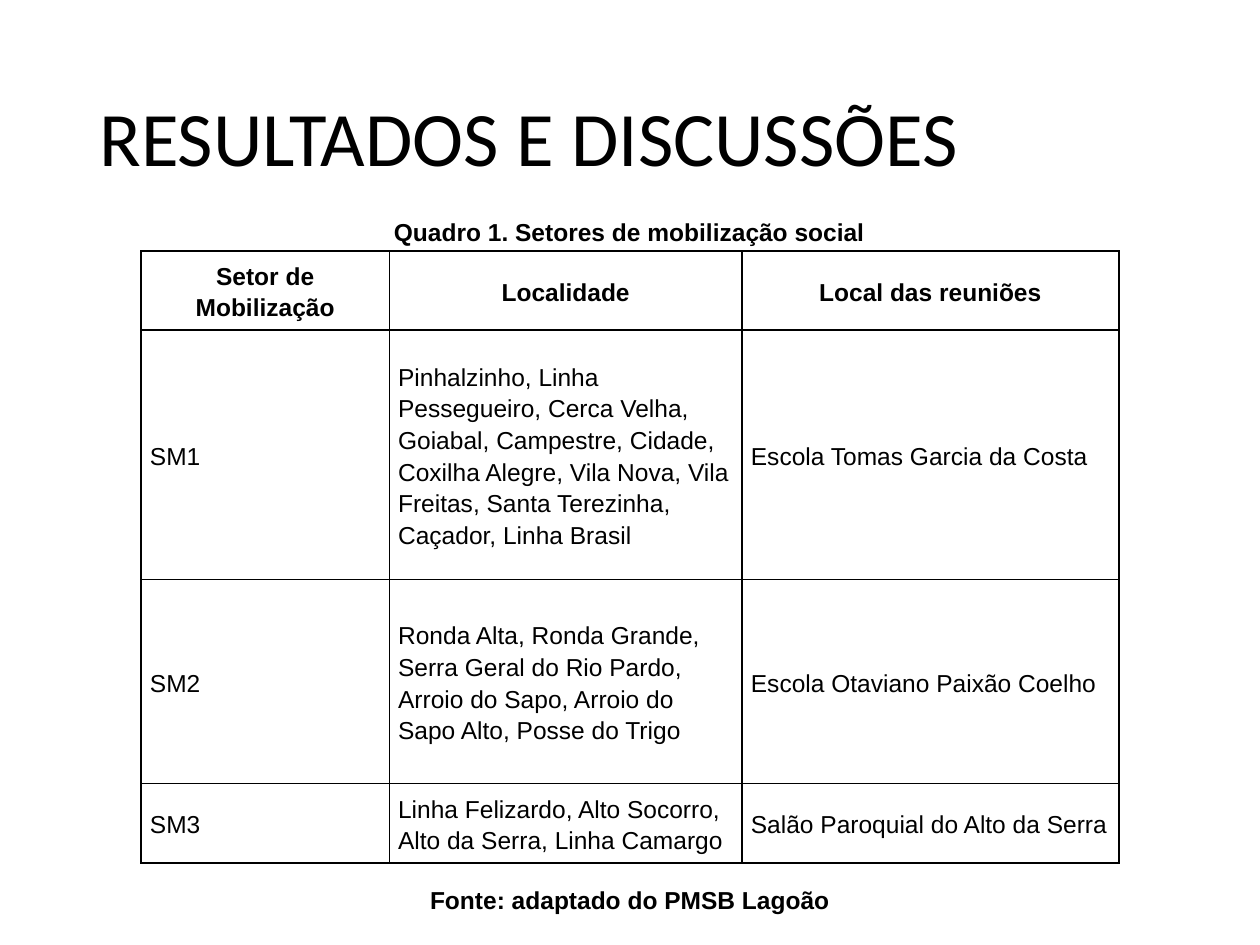
from lxml import etree
from pptx import Presentation
from pptx import util as u
from pptx.dml.color import RGBColor
from pptx.enum import text
from pptx.oxml import ns

BLACK = RGBColor(0x00, 0x00, 0x00)
WHITE = RGBColor(0xFF, 0xFF, 0xFF)
GRID_COLUMNS, GRID_ROWS = 100, 75

HEADERS = ["Setor de Mobilização", "Localidade", "Local das reuniões"]
SECTORS = [
    ["SM1",
     "Pinhalzinho, Linha Pessegueiro, Cerca Velha, Goiabal, Campestre, Cidade, "
     "Coxilha Alegre, Vila Nova, Vila Freitas, Santa Terezinha, Caçador, Linha Brasil",
     "Escola Tomas Garcia da Costa"],
    ["SM2",
     "Ronda Alta, Ronda Grande, Serra Geral do Rio Pardo, Arroio do Sapo, "
     "Arroio do Sapo Alto, Posse do Trigo",
     "Escola Otaviano Paixão Coelho"],
    ["SM3",
     "Linha Felizardo, Alto Socorro, Alto da Serra, Linha Camargo",
     "Salão Paroquial do Alto da Serra"],
]


class SlideBuilder:
    """Holds the text style and the current slide; lengths are grid units."""

    body_font, body_size = "Arial", 14

    def __init__(self, presentation):
        self.column = presentation.slide_width / GRID_COLUMNS
        self.row = presentation.slide_height / GRID_ROWS
        self.slide = presentation.slides.add_slide(presentation.slide_layouts[6])

    def place(self, left, top, width, height):
        return (round(left * self.column), round(top * self.row),
                round(width * self.column), round(height * self.row))

    def style(self, paragraph, align, font=body_font, size=body_size, bold=False):
        paragraph.alignment = align
        paragraph.font.name = font
        paragraph.font.size = u.Pt(size)
        paragraph.font.bold = bold
        paragraph.font.color.rgb = BLACK

    def text_box(self, words, place, wrap, align, **font):
        frame = self.slide.shapes.add_textbox(*self.place(*place)).text_frame
        frame.word_wrap = wrap
        frame.vertical_anchor = text.MSO_ANCHOR.MIDDLE
        paragraph = frame.paragraphs[0]
        paragraph.text = words
        self.style(paragraph, align, **font)
        return paragraph

    def title(self, words, place):
        paragraph = self.text_box(words, place, True, text.PP_ALIGN.LEFT,
                                  font="Calibri", size=44)
        paragraph.line_spacing = 0.9

    def caption(self, words, place):
        self.text_box(words, place, False, text.PP_ALIGN.CENTER, bold=True)

    def borders(self, cell):
        properties = cell._tc.get_or_add_tcPr()
        for index, side in enumerate(("lnL", "lnR", "lnT", "lnB")):
            line = etree.Element(ns.qn(f"a:{side}"), w=str(u.Pt(1)))
            fill = etree.SubElement(line, ns.qn("a:solidFill"))
            etree.SubElement(fill, ns.qn("a:srgbClr"), val=str(BLACK))
            properties.insert(index, line)

    def cell(self, cell, words, header):
        cell.fill.solid()
        cell.fill.fore_color.rgb = WHITE
        cell.vertical_anchor = text.MSO_ANCHOR.MIDDLE
        cell.margin_left = cell.margin_right = u.Inches(0.07)
        cell.margin_top = cell.margin_bottom = 0
        paragraph = cell.text_frame.paragraphs[0]
        paragraph.text = words
        paragraph.line_spacing = 1.15
        paragraph.space_after = u.Pt(10)
        align = text.PP_ALIGN.CENTER if header else text.PP_ALIGN.LEFT
        self.style(paragraph, align, bold=header)
        self.borders(cell)

    def table(self, rows, left, top, widths, heights):
        place = self.place(left, top, sum(widths), sum(heights))
        table = self.slide.shapes.add_table(len(rows), len(widths), *place).table
        table.horz_banding = False
        for column, width in zip(table.columns, widths):
            column.width = round(width * self.column)
        for index, (row, height) in enumerate(zip(table.rows, heights)):
            row.height = round(height * self.row)
            for cell, words in zip(row.cells, rows[index]):
                self.cell(cell, words, header=index == 0)


def main():
    presentation = Presentation()
    presentation.slide_width, presentation.slide_height = u.Inches(10), u.Inches(7.5)
    builder = SlideBuilder(presentation)

    # Heading
    builder.title("RESULTADOS E DISCUSSÕES", (6.9, 4, 86.2, 14.5))

    # Table of sectors
    builder.table([HEADERS] + SECTORS, 11.2, 19.9,
                  widths=(19.7, 28, 29.9), heights=(6.3, 19.8, 16.2, 6.3))

    # Captions above and below the table
    builder.caption("Quadro 1. Setores de mobilização social", (30.2, 16.7, 39.5, 3.4))
    builder.caption("Fonte: adaptado do PMSB Lagoão", (33.1, 69.7, 33.8, 3.4))

    presentation.save("out.pptx")


if __name__ == "__main__":
    main()
